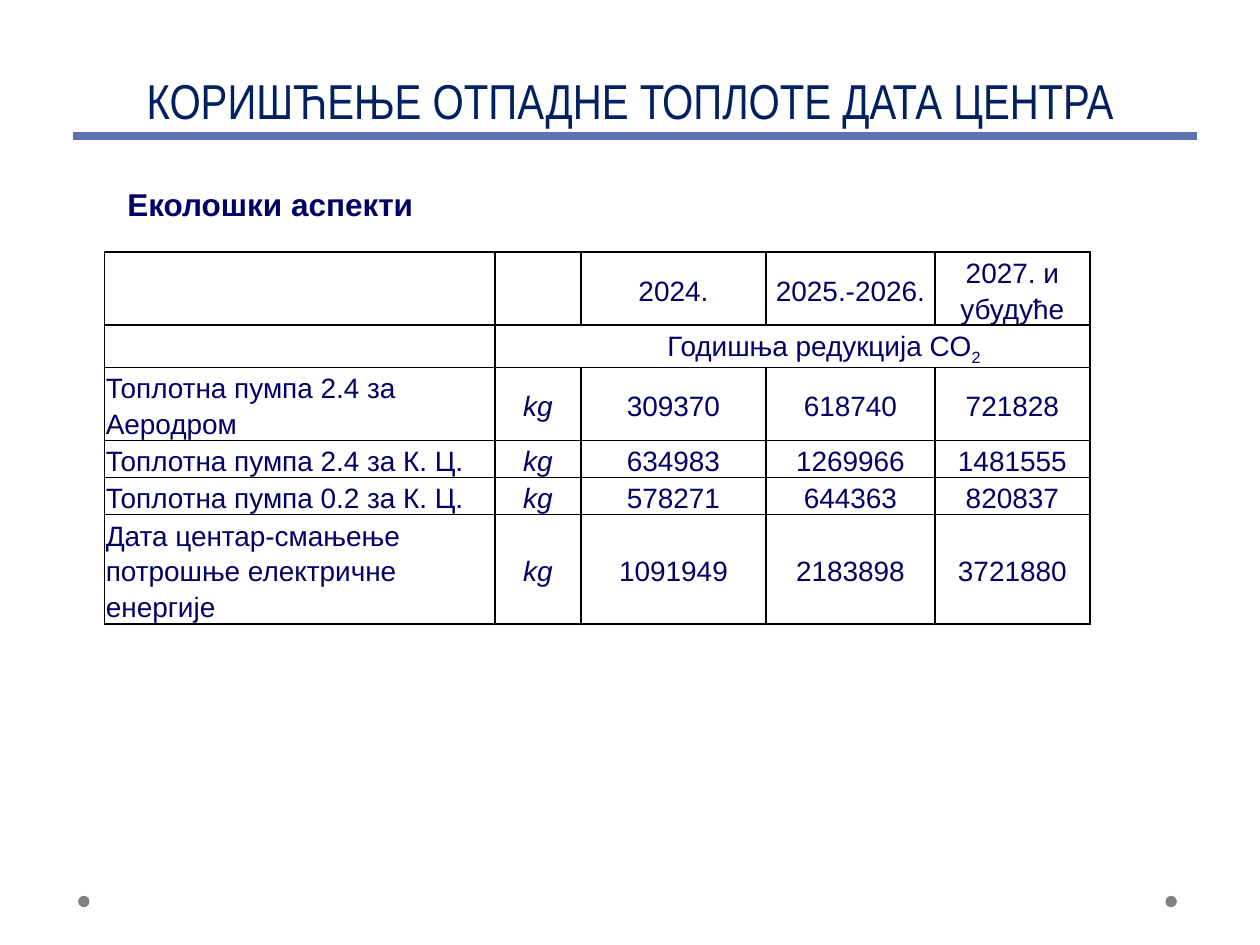
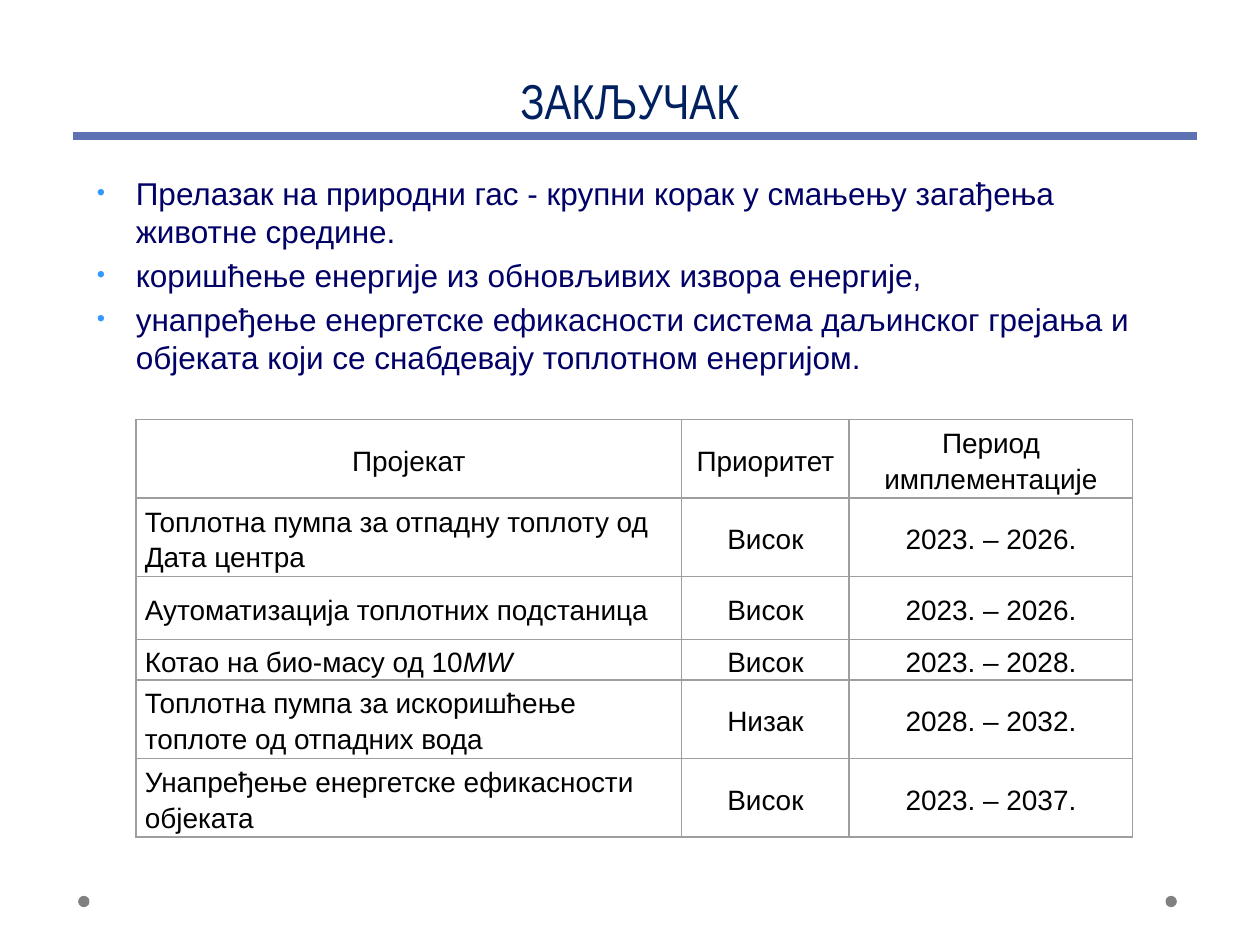
from lxml.etree import SubElement
from pptx import Presentation
from pptx.dml.color import RGBColor
from pptx.enum.shapes import MSO_CONNECTOR, MSO_SHAPE
from pptx.enum.text import MSO_ANCHOR as ANCHOR, PP_ALIGN as ALIGN
from pptx.oxml.ns import qn
from pptx.util import Inches, Pt

HEX = {"title": "002060", "rule": "5C72B2", "dot": "808080", "text": "000066",
       "bullet": "3399FF", "black": "000000", "grid": "9E9E9E", "white": "FFFFFF"}
COLOR = {name: RGBColor.from_string(value) for name, value in HEX.items()}


def format_paragraph(p, size, color, bold=False):
    """Set the run fonts and a space before of 20 % of the line."""
    for r in p.runs:
        r.font.name, r.font.size, r.font.bold = "Arial", Pt(size), bold
        r.font.color.rgb = COLOR[color]
    p.space_before = Pt(0)
    before = p._p.pPr.find(qn("a:spcBef"))
    before.remove(before[0])
    SubElement(before, qn("a:spcPct"), val="20000")


def add_grid(s, left, top, widths, heights, rows, side_margin, color, line, fill=None):
    """Add a bordered table; a tuple in a cell gives one run per item."""
    frame = s.shapes.add_table(len(rows), len(widths), Inches(left), Inches(top),
                               Inches(sum(widths)), Inches(sum(heights)))
    table = frame.table
    table.first_row = table.horz_banding = False
    for column, width in zip(table.columns, widths):
        column.width = Inches(width)
    for row, height in zip(table.rows, heights):
        row.height = Inches(height)
    for i, row in enumerate(rows):
        for j, content in enumerate(row):
            cell = table.cell(i, j)
            cell.margin_left = cell.margin_right = Inches(side_margin)
            cell.margin_top, cell.margin_bottom = Inches(0.01), 0
            cell.vertical_anchor = ANCHOR.MIDDLE
            tcPr = cell._tc.get_or_add_tcPr()
            for edge in ("a:lnL", "a:lnR", "a:lnT", "a:lnB"):
                ln = SubElement(tcPr, qn(edge), w=str(Pt(1)))
                SubElement(SubElement(ln, qn("a:solidFill")), qn("a:srgbClr"), val=HEX[line])
            if fill:
                cell.fill.solid()
                cell.fill.fore_color.rgb = COLOR[fill]
            else:
                cell.fill.background()
            if content:
                p = cell.text_frame.paragraphs[0]
                for part in (content if isinstance(content, tuple) else (content,)):
                    r = p.add_run()
                    r.text = part
                    r.font.italic = part in ("kg", "MW")
                p.alignment = ALIGN.LEFT if i and j == 0 else ALIGN.CENTER
                p.line_spacing = 1.15
                format_paragraph(p, 16, color)
    return table


prs = Presentation()
prs.slide_width, prs.slide_height = Inches(10), Inches(7.5)

# Shared frame: title, rule and footer dots
slides = []
for title in ("КОРИШЋЕЊЕ ОТПАДНЕ ТОПЛОТЕ ДАТА ЦЕНТРА", "ЗАКЉУЧАК"):
    s = prs.slides.add_slide(prs.slide_layouts[5])
    slides.append(s)
    sp = s.shapes.title
    sp.left, sp.top, sp.width, sp.height = Inches(0.5), 0, Inches(9), Inches(1.08)
    tf = sp.text_frame
    tf.text = title
    tf.vertical_anchor = ANCHOR.BOTTOM
    p = tf.paragraphs[0]
    p.alignment = ALIGN.CENTER
    p.line_spacing = Pt(58)
    font = p.runs[0].font
    font.name, font.size = "Arial Narrow", Pt(28)
    font.color.rgb = COLOR["title"]

    rule = s.shapes.add_connector(MSO_CONNECTOR.STRAIGHT, Inches(0.58), Inches(1.08),
                                  Inches(9.5), Inches(1.08))
    rule.line.color.rgb = COLOR["rule"]
    rule.line.width = Pt(4.5)
    SubElement(rule._element.spPr, qn("a:effectLst"))

    for left in (0.62, 9.25):
        dot = s.shapes.add_shape(MSO_SHAPE.OVAL, Inches(left), Inches(7.11),
                                 Inches(0.09), Inches(0.09))
        dot.shadow.inherit = False
        dot.fill.solid()
        dot.fill.fore_color.rgb = COLOR["dot"]
        dot.line.fill.background()

ecology, conclusion = slides

# Ecological aspects
co2_rows = [
    ("", "", "2024.", "2025.-2026.", "2027. и убудуће"),
    ("", ("Годишња редукција CO", "2"), "", "", ""),
    ("Топлотна пумпа 2.4 за Аеродром", "kg", "309370", "618740", "721828"),
    ("Топлотна пумпа 2.4 за К. Ц.", "kg", "634983", "1269966", "1481555"),
    ("Топлотна пумпа 0.2 за К. Ц.", "kg", "578271", "644363", "820837"),
    ("Дата центар-смањење потрошње електричне енергије", "kg",
     "1091949", "2183898", "3721880"),
]
table = add_grid(ecology, 0.83, 2, (3.1, 0.68, 1.47, 1.34, 1.23),
                 (0.58, 0.33, 0.58, 0.29, 0.29, 0.87), co2_rows,
                 0.01, "text", "black", "white")
table.cell(1, 1).merge(table.cell(1, 4))
p = table.cell(1, 1).text_frame.paragraphs[0]
p._p.pPr.set("indent", str(Inches(0.5)))
p.runs[1]._r.get_or_add_rPr().set("baseline", "-25000")

sp = ecology.shapes.add_textbox(Inches(0.9), Inches(1.42), Inches(2.49), Inches(0.4))
tf = sp.text_frame
tf.word_wrap = False
tf.text = "Еколошки аспекти"
tf.paragraphs[0].alignment = ALIGN.CENTER
format_paragraph(tf.paragraphs[0], 18, "text", bold=True)

# Conclusion
points = [
    "Прелазак на природни гас - крупни корак у смањењу загађења животне средине.",
    "коришћење енергије из обновљивих извора енергије,",
    "унапређење енергетске ефикасности система даљинског грејања и објеката "
    "који се снабдевају топлотном енергијом.",
]
sp = conclusion.shapes.add_textbox(Inches(0.67), Inches(1.33), Inches(8.58), Inches(1.74))
tf = sp.text_frame
tf.word_wrap = True
tf.text = "\n".join(points)
for p in tf.paragraphs:
    format_paragraph(p, 18, "text")
    pPr = p._p.pPr
    pPr.set("marL", str(Inches(0.31)))
    pPr.set("indent", str(-Inches(0.31)))
    SubElement(SubElement(pPr, qn("a:buClr")), qn("a:srgbClr"), val=HEX["bullet"])
    SubElement(pPr, qn("a:buSzPct"), val="75000")
    SubElement(pPr, qn("a:buFont"), typeface="Arial")
    SubElement(pPr, qn("a:buChar"), char="•")

project_rows = [
    ("Пројекат", "Приоритет", "Период имплементације"),
    ("Топлотна пумпа за отпадну топлоту од Дата центра", "Висок", "2023. – 2026."),
    ("Аутоматизација топлотних подстаница", "Висок", "2023. – 2026."),
    (("Котао на био-масу од 10", "MW"), "Висок", "2023. – 2028."),
    ("Топлотна пумпа за искоришћење топлоте од отпадних вода", "Низак", "2028. – 2032."),
    ("Унапређење енергетске ефикасности објеката", "Висок", "2023. – 2037."),
]
add_grid(conclusion, 1.08, 3.33, (4.33, 1.33, 2.25),
         (0.62, 0.62, 0.5, 0.32, 0.62, 0.62), project_rows, 0.07, "black", "grid")

prs.save("out.pptx")
